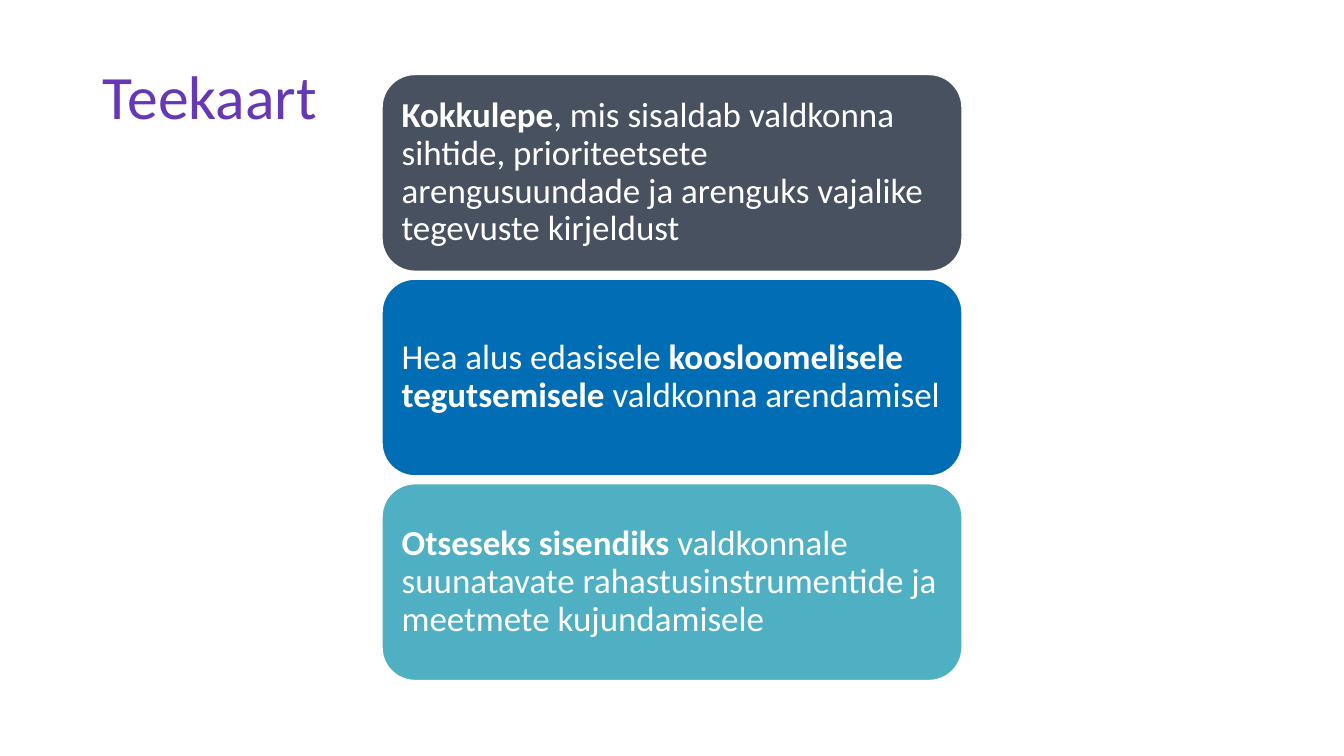
import pptx
import pptx.util
import pptx.dml.color
import pptx.enum.shapes
import pptx.enum.text
import pptx.slide
import pptx.text.text
from dataclasses import dataclass

Inches = pptx.util.Inches
Pt = pptx.util.Pt
RGBColor = pptx.dml.color.RGBColor
Align = pptx.enum.text.PP_ALIGN
Anchor = pptx.enum.text.MSO_ANCHOR

WHITE = RGBColor(0xFF, 0xFF, 0xFF)
PURPLE = RGBColor(0x66, 0x38, 0xB6)
SLATE = RGBColor(0x48, 0x51, 0x60)
BLUE = RGBColor(0x00, 0x6D, 0xB5)
TEAL = RGBColor(0x4E, 0xB0, 0xC2)
FONT = "Calibri"

# Card column, in inches
LEFT, TOP = 3.79, 0.74
WIDE, HIGH = 5.75, 1.95
STEP = 2.03


@dataclass
class Card:
    fill: RGBColor
    words: list[tuple[str, bool]]  # text, bold


CARDS = [
    Card(SLATE, [
        ("Kokkulepe", True),
        (", mis sisaldab valdkonna sihtide, prioriteetsete "
         "arengusuundade ja arenguks vajalike tegevuste kirjeldust", False),
    ]),
    Card(BLUE, [
        ("Hea alus edasisele ", False),
        ("koosloomelisele tegutsemisele ", True),
        ("valdkonna arendamisel", False),
    ]),
    Card(TEAL, [
        ("Otseseks sisendiks ", True),
        ("valdkonnale suunatavate rahastusinstrumentide "
         "ja meetmete kujundamisele", False),
    ]),
]


def style(para: pptx.text.text._Paragraph, size: float, color: RGBColor) -> None:
    para.alignment = Align.LEFT
    para.line_spacing = 0.9
    for run in para.runs:
        run.font.name = FONT
        run.font.size = Pt(size)
        run.font.color.rgb = color


def draw_title(slide: pptx.slide.Slide, text: str) -> None:
    title = slide.shapes.title
    title.left, title.top = Inches(0.92), Inches(0)
    title.width, title.height = Inches(8.97), Inches(1.97)
    frame = title.text_frame
    frame.text = text
    frame.vertical_anchor = Anchor.MIDDLE
    style(frame.paragraphs[0], 44, PURPLE)


def draw_card(slide: pptx.slide.Slide, card: Card, row: int) -> None:
    box = slide.shapes.add_shape(
        pptx.enum.shapes.MSO_SHAPE.ROUNDED_RECTANGLE,
        Inches(LEFT), Inches(TOP + row * STEP), Inches(WIDE), Inches(HIGH))
    box.shadow.inherit = False
    box.fill.solid()
    box.fill.fore_color.rgb = card.fill
    box.line.color.rgb = WHITE
    box.line.width = Pt(0.85)

    frame = box.text_frame
    frame.word_wrap = True
    frame.vertical_anchor = Anchor.MIDDLE
    frame.margin_left = frame.margin_right = Inches(0.1)
    frame.margin_top = frame.margin_bottom = Inches(0.1)
    para = frame.paragraphs[0]
    for text, bold in card.words:
        run = para.add_run()
        run.text = text
        run.font.bold = bold
    style(para, 25, WHITE)


def main() -> None:
    deck = pptx.Presentation()
    deck.slide_width, deck.slide_height = Inches(13.33), Inches(7.5)
    slide = deck.slides.add_slide(deck.slide_layouts[5])  # title only
    draw_title(slide, "Teekaart")
    for row, card in enumerate(CARDS):
        draw_card(slide, card, row)
    deck.save("out.pptx")


if __name__ == "__main__":
    main()
